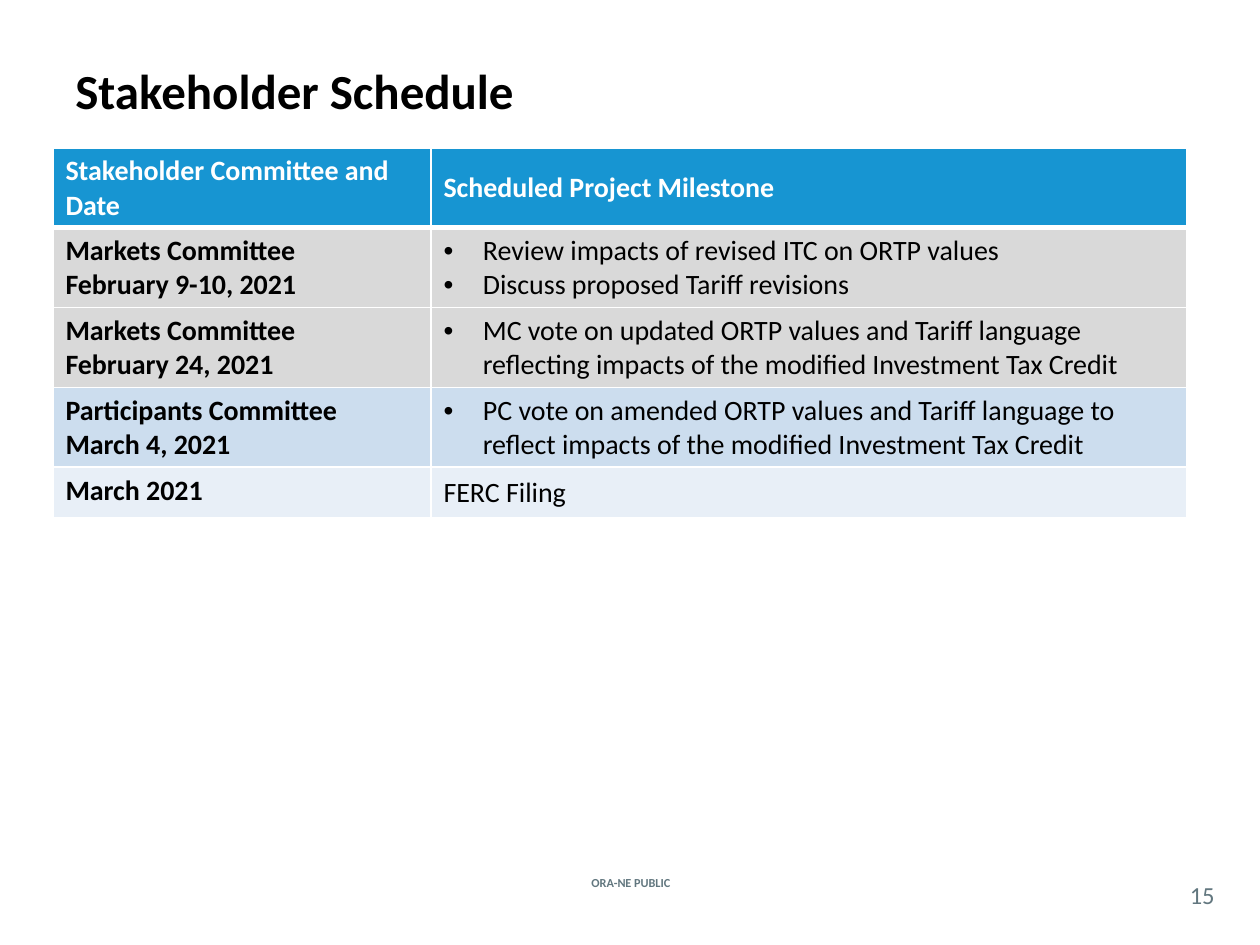
from lxml import etree
from pptx import Presentation
from pptx.dml.color import RGBColor
from pptx.enum import text as t
from pptx.oxml import ns
from pptx.util import Pt

BLACK = RGBColor(0x00, 0x00, 0x00)
WHITE = RGBColor(0xFF, 0xFF, 0xFF)
SLATE = RGBColor(0x62, 0x77, 0x7F)
HEADER_BLUE = RGBColor(0x17, 0x95, 0xD2)
GREY = RGBColor(0xD9, 0xD9, 0xD9)
MID_BLUE = RGBColor(0xCC, 0xDD, 0xEE)
PALE_BLUE = RGBColor(0xE8, 0xEF, 0xF7)

LEFT, CENTER = t.PP_ALIGN.LEFT, t.PP_ALIGN.CENTER
TOP, MIDDLE = t.MSO_ANCHOR.TOP, t.MSO_ANCHOR.MIDDLE


def add_child(parent, tag, **attributes):
    return etree.SubElement(parent, ns.qn(tag), attributes)


class SlideBuilder:
    font_name = "Calibri"
    bullet_indent = Pt(22.5)

    def __init__(self, slide):
        self.slide = slide

    def fill_text(self, frame, lines, size, color, bold=False, align=LEFT,
                  bulleted=False):
        """Put one paragraph per line into the frame."""
        formats = {"name": self.font_name, "size": Pt(size), "bold": bold}
        for index, line in enumerate(lines):
            paragraph = frame.paragraphs[0] if index == 0 else frame.add_paragraph()
            paragraph.alignment = align
            if bulleted:
                self.bullet(paragraph)
            run = paragraph.add_run()
            run.text = line
            run.font.color.rgb = color
            for key, value in formats.items():
                setattr(run.font, key, value)

    def bullet(self, paragraph):
        properties = paragraph._p.get_or_add_pPr()
        properties.set("marL", str(self.bullet_indent))
        properties.set("indent", str(-self.bullet_indent))
        add_child(properties, "a:buFont", typeface="Arial")
        add_child(properties, "a:buChar", char="•")

    def text(self, line, left, top, width, height, inset=(7.2, 3.6), **style):
        box = self.slide.shapes.add_textbox(Pt(left), Pt(top), Pt(width), Pt(height))
        across, down = map(Pt, inset)
        formats = {"word_wrap": True, "vertical_anchor": MIDDLE,
                   "margin_left": across, "margin_right": across,
                   "margin_top": down, "margin_bottom": down}
        for key, value in formats.items():
            setattr(box.text_frame, key, value)
        self.fill_text(box.text_frame, [line], **style)

    def borders(self, cell, **widths):
        properties = cell._tc.get_or_add_tcPr()
        for side in "LRTB":
            line = add_child(properties, f"a:ln{side}", w=str(Pt(widths.get(side, 1))))
            add_child(add_child(line, "a:solidFill"), "a:srgbClr", val=str(WHITE))

    def cell(self, cell, lines, fill, anchor=MIDDLE, edges=None, **style):
        self.borders(cell, **(edges or {}))
        cell.fill.solid()
        cell.fill.fore_color.rgb = fill
        cell.vertical_anchor = anchor
        self.fill_text(cell.text_frame, lines, size=16, **style)

    def table(self, left, top, widths, heights):
        table = self.slide.shapes.add_table(
            len(heights), len(widths), Pt(left), Pt(top),
            Pt(sum(widths)), Pt(sum(heights))).table
        for column, width in zip(table.columns, widths):
            column.width = Pt(width)
        for row, height in zip(table.rows, heights):
            row.height = Pt(height)
        return table


HEADINGS = ["Stakeholder Committee and Date", "Scheduled Project Milestone"]
# Committee and date, milestones, bulleted, row colour
SCHEDULE = [
    (["Markets Committee", "February 9-10, 2021"],
     ["Review impacts of revised ITC on ORTP values",
      "Discuss proposed Tariff revisions"], True, GREY),
    (["Markets Committee", "February 24, 2021"],
     ["MC vote on updated ORTP values and Tariff language reflecting impacts "
      "of the modified Investment Tax Credit"], True, GREY),
    (["Participants Committee", "March 4, 2021"],
     ["PC vote on amended ORTP values and Tariff language to reflect impacts "
      "of the modified Investment Tax Credit"], True, MID_BLUE),
    (["March 2021"], ["FERC Filing"], False, PALE_BLUE),
]


def main():
    deck = Presentation()
    deck.slide_width, deck.slide_height = Pt(720), Pt(540)
    builder = SlideBuilder(deck.slides.add_slide(deck.slide_layouts[6]))

    # Title
    builder.text("Stakeholder Schedule", 36, 30.5, 648, 42,
                 size=28, bold=True, color=BLACK)

    # Schedule table
    schedule = builder.table(30.25, 84.5, [216, 432], [44, 43.2, 43.2, 43.2, 29])
    for column, heading in enumerate(HEADINGS):
        builder.cell(schedule.cell(0, column), [heading], HEADER_BLUE,
                     edges={"B": 3}, bold=True, color=WHITE)
    for row, (committee, milestones, bulleted, fill) in enumerate(SCHEDULE, 1):
        edges = {"T": 3} if row == 1 else None
        builder.cell(schedule.cell(row, 0), committee, fill, anchor=TOP,
                     edges=edges, bold=True, color=BLACK)
        builder.cell(schedule.cell(row, 1), milestones, fill,
                     edges=edges, bulleted=bulleted, color=BLACK)

    # Footer and page number
    builder.text("ORA-NE PUBLIC", 307.5, 498.25, 106, 12.5,
                 align=CENTER, size=7, bold=True, color=SLATE)
    builder.text("15", 672, 501, 30, 21, inset=(0, 0),
                 align=CENTER, size=14, color=SLATE)

    deck.save("out.pptx")


if __name__ == "__main__":
    main()
